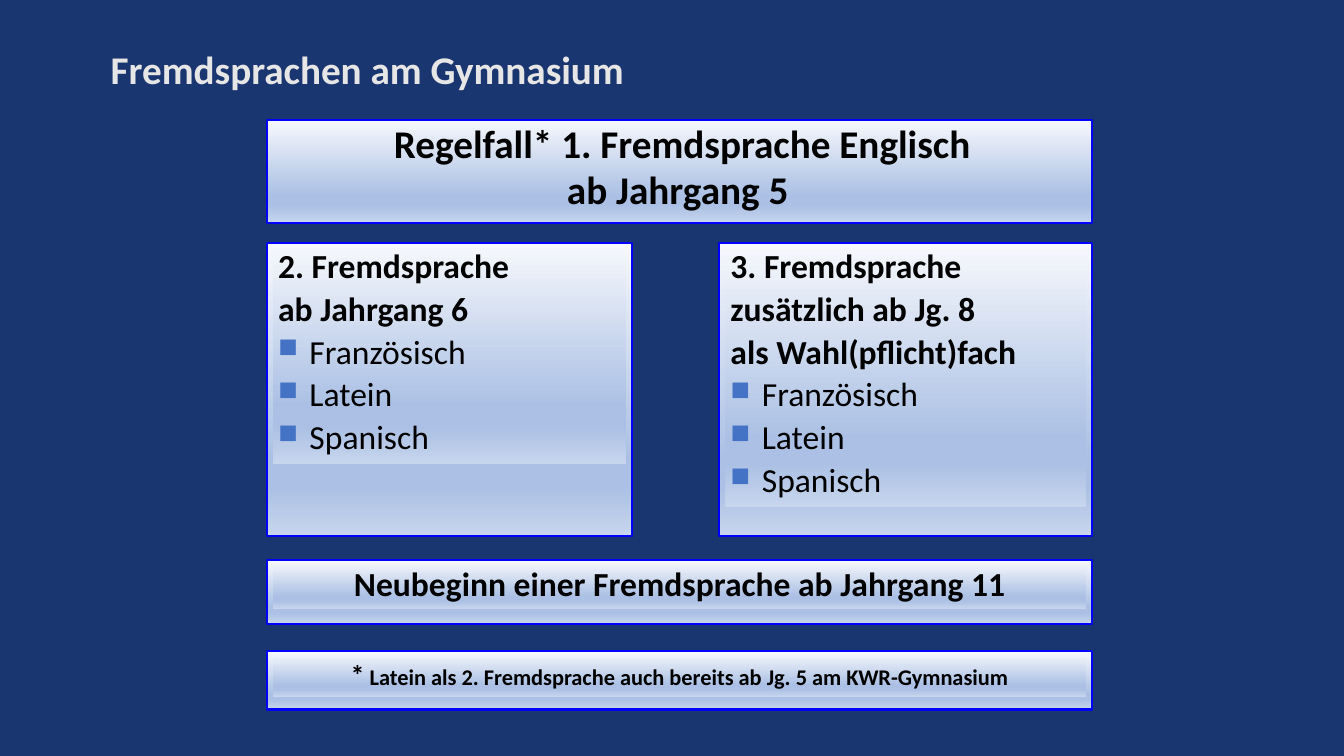
from dataclasses import dataclass
from typing import Any, Optional

from lxml import etree
from pptx import Presentation
from pptx.dml.color import RGBColor
from pptx.enum.shapes import MSO_SHAPE
from pptx.enum.text import MSO_ANCHOR, PP_ALIGN
from pptx.oxml import parse_xml
from pptx.oxml.ns import nsdecls, qn
from pptx.util import Cm, Pt

RECT = MSO_SHAPE.RECTANGLE
LEFT, CENTER = PP_ALIGN.LEFT, PP_ALIGN.CENTER
TOP, MIDDLE = MSO_ANCHOR.TOP, MSO_ANCHOR.MIDDLE


@dataclass(frozen=True)
class Theme:
    font: str = "Calibri"
    background: str = "1A3670"
    border: str = "0000FF"
    title: str = "E7E6E6"
    text: str = "000000"
    bullet: str = "4472C4"
    gradient: tuple = ((0, "F6F8FC"), (74, "ABC0E4"), (83, "ABC0E4"), (100, "C7D5ED"))
    large: int = 28
    normal: int = 24
    star: int = 20
    note: int = 16


THEME = Theme()


@dataclass(frozen=True)
class Run:
    text: str
    size: int = THEME.normal
    bold: bool = True
    color: str = THEME.text


@dataclass(frozen=True)
class Para:
    runs: tuple
    bullet: bool = False


@dataclass(frozen=True)
class Panel:
    x: float
    y: float
    w: float
    h: float
    paras: tuple
    label_h: Optional[float] = None  # height of the inner label, if there is one
    align: Any = CENTER
    line_spacing: float = 0.92
    space_before: int = 2


def line(text: str, size: int = THEME.normal) -> Para:
    return Para((Run(text, size),))


LANGUAGES = tuple(Para((Run(name, bold=False),), bullet=True)
                  for name in ("Französisch", "Latein", "Spanisch"))

# Panel grid in centimetres
X, W = 6.73, 20.8
LEFT_W, RIGHT_W = 9.19, 9.4
COLUMN = dict(y=6.12, h=7.39, align=LEFT, space_before=4)

PANELS = (
    Panel(X, 3.02, W, 2.59,
          (line("Regelfall* 1. Fremdsprache Englisch", THEME.large),
           line("ab Jahrgang 5 ", THEME.large)), line_spacing=0.9),
    Panel(X, w=LEFT_W, label_h=5.54, **COLUMN,
          paras=(line("2. Fremdsprache"), line("ab Jahrgang 6")) + LANGUAGES),
    Panel(X + W - RIGHT_W, w=RIGHT_W, label_h=6.63, **COLUMN,
          paras=(line("3. Fremdsprache"), line("zusätzlich ab Jg. 8"),
                 line("als Wahl(pflicht)fach")) + LANGUAGES),
    Panel(X, 14.12, W, 1.6,
          (line("Neubeginn einer Fremdsprache ab Jahrgang 11"),), label_h=1.19),
    Panel(X, 16.41, W, 1.47,
          (Para((Run("*", THEME.star),
                 Run(" Latein als 2. Fremdsprache auch bereits ab Jg. 5 am KWR-Gymnasium",
                     THEME.note))),), label_h=1.12, line_spacing=1.0),
)


def set_all(target: Any, values: dict) -> None:
    for name, value in values.items():
        setattr(target, name, value)


def add_bullet(p: Any) -> None:
    pPr = p._p.get_or_add_pPr()
    pPr.set("marL", str(Cm(0.79)))
    pPr.set("indent", str(-Cm(0.79)))
    color = etree.SubElement(pPr, qn("a:buClr"))
    etree.SubElement(color, qn("a:srgbClr"), val=THEME.bullet)
    etree.SubElement(pPr, qn("a:buSzPct"), val="80000")
    etree.SubElement(pPr, qn("a:buChar"), char="■")


def write(sp: Any, paras: tuple, align: Any, spacing: float, before: int,
          margins: tuple, anchor: Any = TOP) -> None:
    tf = sp.text_frame
    left, top = (Cm(m) for m in margins)
    set_all(tf, dict(word_wrap=True, vertical_anchor=anchor, margin_left=left,
                     margin_right=Cm(0.13), margin_top=top, margin_bottom=top))
    for i, para in enumerate(paras):
        p = tf.add_paragraph() if i else tf.paragraphs[0]
        if para.bullet:
            add_bullet(p)
        set_all(p, dict(alignment=align, line_spacing=spacing,
                        space_before=Pt(before if i else 0)))
        for run in para.runs:
            r = p.add_run()
            r.text = run.text
            set_all(r.font, dict(name=THEME.font, size=Pt(run.size), bold=run.bold))
            r.font.color.rgb = RGBColor.from_string(run.color)


def add_box(s: Any, x: float, y: float, w: float, h: float, border: bool) -> Any:
    sp = s.shapes.add_shape(RECT, Cm(x), Cm(y), Cm(w), Cm(h))
    sp.shadow.inherit = False
    if border:
        sp.line.color.rgb = RGBColor.from_string(THEME.border)
        sp.line.width = Pt(1.5)
    else:
        sp.line.fill.background()
    # Vertical gradient with four stops
    stops = "".join(f'<a:gs pos="{pos * 1000}"><a:srgbClr val="{color}"/></a:gs>'
                    for pos, color in THEME.gradient)
    fill = parse_xml(f'<a:gradFill {nsdecls("a")} rotWithShape="1"><a:gsLst>{stops}'
                     '</a:gsLst><a:lin ang="5400000" scaled="0"/></a:gradFill>')
    sp._element.spPr.find(qn("a:prstGeom")).addnext(fill)
    return sp


def add_panel(s: Any, panel: Panel) -> None:
    sp = add_box(s, panel.x, panel.y, panel.w, panel.h, border=True)
    margins = (0.25, 0.13)
    if panel.label_h:
        sp = add_box(s, panel.x + 0.15, panel.y + 0.03, panel.w - 0.3,
                     panel.label_h, border=False)
        margins = (0.13, 0.13)
    write(sp, panel.paras, panel.align, panel.line_spacing, panel.space_before, margins)


def main() -> None:
    prs = Presentation()
    prs.slide_width, prs.slide_height = Cm(33.87), Cm(19.05)
    s = prs.slides.add_slide(prs.slide_layouts[6])
    s.background.fill.solid()
    s.background.fill.fore_color.rgb = RGBColor.from_string(THEME.background)

    # Title
    title = s.shapes.add_textbox(Cm(0), Cm(0.71), Cm(17.88), Cm(2.18))
    heading = Para((Run("Fremdsprachen am Gymnasium", THEME.large, color=THEME.title),))
    write(title, (heading,), LEFT, 0.9, 0, (2.79, 0.13), MIDDLE)

    # Language panels
    for panel in PANELS:
        add_panel(s, panel)

    prs.save("out.pptx")


if __name__ == "__main__":
    main()
